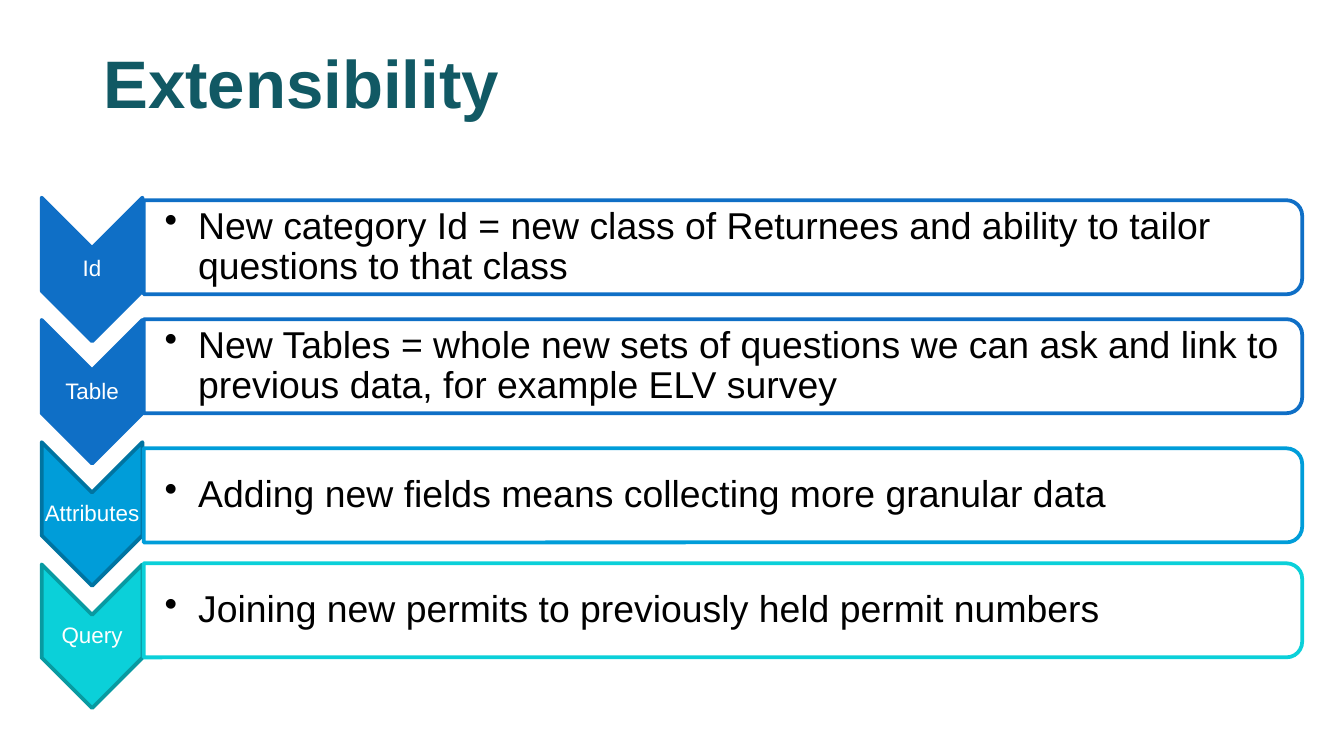
from pptx import Presentation
from pptx.dml.color import RGBColor
from pptx.enum.shapes import MSO_SHAPE
from pptx.enum.text import MSO_ANCHOR, MSO_AUTO_SIZE, PP_ALIGN
from pptx.oxml.ns import qn
from pptx.util import Pt
from lxml.etree import SubElement

FONT = "Arial"
CHEVRON_LENGTH, CHEVRON_BREADTH = 77, 54
CHEVRON_CENTER_X, FIRST_CHEVRON_Y, CHEVRON_STEP = 49.3, 144.4, 65.5
BAR_LEFT, BAR_LENGTH, BAR_BREADTH = 77, 620.6, 50.4

# Label, chevron fill, chevron line, bar line, bar opacity, bar center y, bar text
STEPS = [
    ("Id", "0F6FC6", "0F6FC6", "0F6FC6", 90, 132.5,
     "New category Id = new class of Returnees and ability to tailor questions to that class"),
    ("Table", "0F6FC6", "0F6FC6", "0F6FC6", 90, 196.2,
     "New Tables = whole new sets of questions we can ask and link to previous data, "
     "for example ELV survey"),
    ("Attributes", "009DD9", "0074A1", "009DD9", 100, 265.4,
     "Adding new fields means collecting more granular data"),
    ("Query", "0BD0D9", "089AA1", "0BD0D9", 100, 327,
     "Joining new permits to previously held permit numbers"),
]


def color(value):
    return RGBColor.from_string(value)


def set_format(target, values):
    for name, value in values.items():
        setattr(target, name, value)


def add_turned_shape(shapes, kind, center_x, center_y, length, breadth, fill, line, opacity=100):
    """Add a shape turned a quarter clockwise around its center."""
    shape = shapes.add_shape(kind, Pt(center_x - length / 2), Pt(center_y - breadth / 2),
                             Pt(length), Pt(breadth))
    shape.rotation = 90
    shape.shadow.inherit = False
    shape.fill.solid()
    shape.fill.fore_color.rgb = color(fill)
    shape.line.color.rgb = color(line)
    shape.line.width = Pt(2)
    if opacity < 100:
        fill_color = shape.fill._xPr.find(qn("a:solidFill"))[0]
        SubElement(fill_color, qn("a:alpha"), val=str(opacity * 1000))


def add_text(shapes, text, left, center_y, width, height, size, text_color,
             inset=1, alignment=PP_ALIGN.LEFT, bullet=False):
    box = shapes.add_textbox(Pt(left), Pt(center_y - height / 2), Pt(width), Pt(height))
    frame = box.text_frame
    set_format(frame, {
        "word_wrap": True, "vertical_anchor": MSO_ANCHOR.MIDDLE,
        "margin_left": Pt(inset), "margin_right": Pt(1),
        "margin_top": Pt(1), "margin_bottom": Pt(1),
    })
    para = frame.paragraphs[0]
    set_format(para, {"alignment": alignment, "line_spacing": 0.9})
    if bullet:
        properties = para._p.get_or_add_pPr()
        properties.set("marL", str(Pt(18)))
        properties.set("indent", str(-Pt(18)))
        SubElement(properties, qn("a:buChar"), char="•")
    span = para.add_run()
    set_format(span, {"text": text})
    set_format(span.font, {"name": FONT, "size": Pt(size)})
    span.font.color.rgb = color(text_color)


def add_title(page, text):
    title = page.shapes.title
    set_format(title, {"left": Pt(48.2), "top": Pt(25.2), "width": Pt(648), "height": Pt(37.4)})
    set_format(title.text_frame, {"text": text, "vertical_anchor": MSO_ANCHOR.MIDDLE,
                                  "auto_size": MSO_AUTO_SIZE.NONE})
    para = title.text_frame.paragraphs[0]
    para.alignment = PP_ALIGN.LEFT
    font = para.runs[0].font
    set_format(font, {"name": FONT, "size": Pt(36), "bold": True})
    font.color.rgb = color("115964")


def add_step(shapes, index, step):
    label, fill, edge, bar_line, opacity, bar_y, text = step
    chevron_y = FIRST_CHEVRON_Y + index * CHEVRON_STEP

    # Chevron with its label
    add_turned_shape(shapes, MSO_SHAPE.CHEVRON, CHEVRON_CENTER_X, chevron_y,
                     CHEVRON_LENGTH, CHEVRON_BREADTH, fill, edge)
    add_text(shapes, label, CHEVRON_CENTER_X - CHEVRON_BREADTH / 2, chevron_y,
             CHEVRON_BREADTH, 23, 12, "FFFFFF", alignment=PP_ALIGN.CENTER)

    # Bar with its bullet
    add_turned_shape(shapes, MSO_SHAPE.ROUND_2_SAME_RECTANGLE, BAR_LEFT + BAR_LENGTH / 2, bar_y,
                     BAR_BREADTH, BAR_LENGTH, "FFFFFF", bar_line, opacity)
    add_text(shapes, text, BAR_LEFT, bar_y, 618, 45.4, 20, "000000", inset=11.2, bullet=True)


def main():
    deck = Presentation()
    set_format(deck, {"slide_width": Pt(720), "slide_height": Pt(405)})
    page = deck.slides.add_slide(deck.slide_layouts[5])
    add_title(page, "Extensibility")

    # Chevron list
    group = page.shapes.add_group_shape()
    for index, step in enumerate(STEPS):
        add_step(group.shapes, index, step)
    deck.save("out.pptx")


if __name__ == "__main__":
    main()
